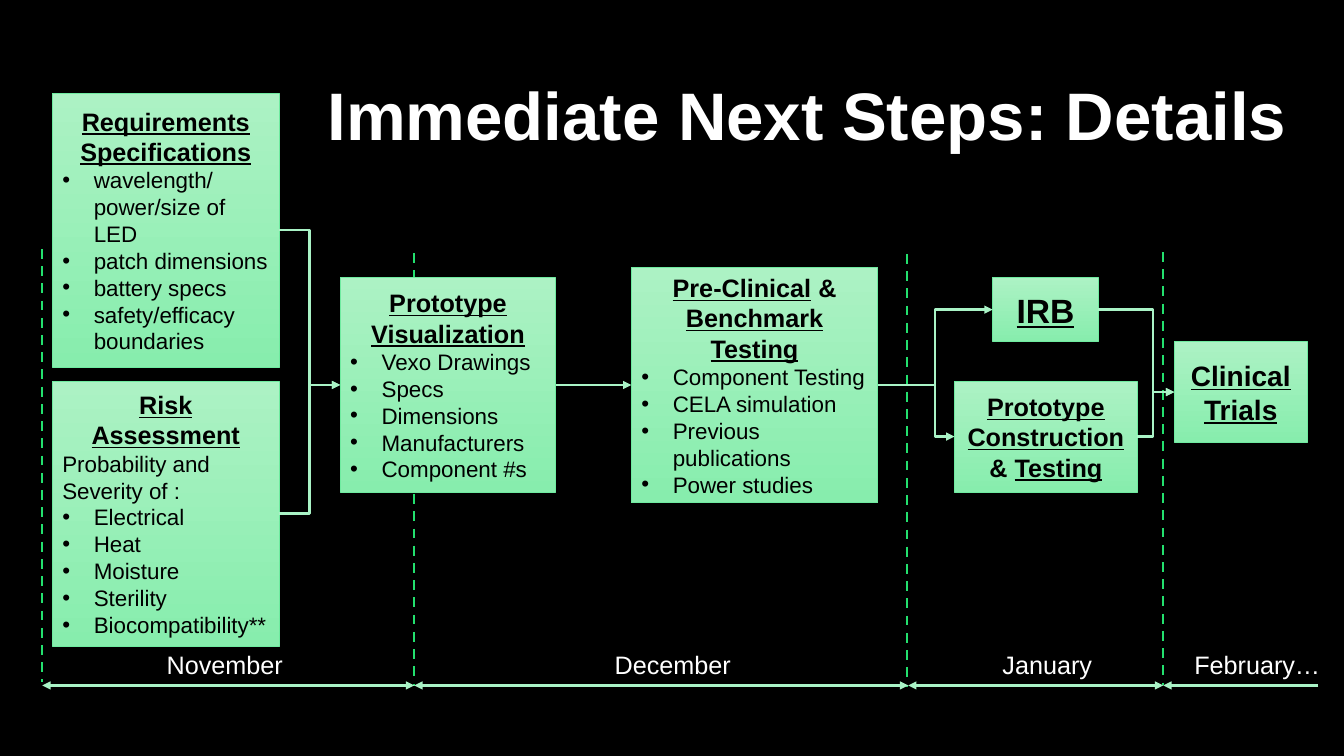
import pptx
import pptx.dml.color
import pptx.enum.dml
import pptx.enum.shapes
import pptx.enum.text
import pptx.oxml.ns
import pptx.util
from lxml import etree

COLORS = {
    "background": "000000",
    "title": "FFFFFF",
    "box_text": "000000",
    "box_top": "ACF2C4",
    "box_bottom": "87EDAD",
    "box_edge": "6FEBA0",
    "arrow": "A9F3C6",
    "divider": "23E06E",
}
FONT = "Arial"
LEFT, RIGHT = 1, 3
TIMELINE_Y = 489.6

Pt = pptx.util.Pt
qn = pptx.oxml.ns.qn
Align = pptx.enum.text.PP_ALIGN
Anchor = pptx.enum.text.MSO_ANCHOR
Connector = pptx.enum.shapes.MSO_CONNECTOR


def rgb(name):
    return pptx.dml.color.RGBColor.from_string(COLORS[name])


def add_span(para, text, *, size=16, color="box_text", bold=False, underline=False):
    span = para.add_run()
    span.text = text
    span.font.name = FONT
    span.font.size = Pt(size)
    span.font.bold = bold
    span.font.underline = underline
    span.font.color.rgb = rgb(color)


class SlideBuilder:
    """Holds the deck, the current page and the shared style."""

    def __init__(self, width, height):
        self.deck = pptx.Presentation()
        self.deck.slide_width = Pt(width)
        self.deck.slide_height = Pt(height)
        self.page = self.deck.slides.add_slide(self.deck.slide_layouts[6])
        self.page.background.fill.solid()
        self.page.background.fill.fore_color.rgb = rgb("background")

    def label(self, text, left, top, width, height, *, wrap=False,
              anchor=Anchor.TOP, **span_format):
        box = self.page.shapes.add_textbox(Pt(left), Pt(top), Pt(width), Pt(height))
        box.text_frame.word_wrap = wrap
        box.text_frame.vertical_anchor = anchor
        add_span(box.text_frame.paragraphs[0], text, **span_format)

    def box(self, left, top, width, height, heading, *, size=18, intro=None, bullets=()):
        """Heading spans alternate between underlined and plain."""
        box = self.page.shapes.add_shape(
            pptx.enum.shapes.MSO_SHAPE.RECTANGLE,
            Pt(left), Pt(top), Pt(width), Pt(height))
        box.shadow.inherit = False
        box.fill.gradient()
        box.fill.gradient_angle = 270
        for stop, color in zip(box.fill.gradient_stops, ("box_top", "box_bottom")):
            stop.color.rgb = rgb(color)
        box.line.color.rgb = rgb("box_edge")
        box.line.width = Pt(0.75)

        frame = box.text_frame
        frame.word_wrap = True
        frame.vertical_anchor = Anchor.MIDDLE
        para = frame.paragraphs[0]
        para.alignment = Align.CENTER
        for index, text in enumerate(heading):
            add_span(para, text, size=size, bold=True, underline=index % 2 == 0)
        if intro:
            para = frame.add_paragraph()
            para.alignment = Align.LEFT
            add_span(para, intro)
        for text in bullets:
            self.bullet(frame, text)
        return box

    def bullet(self, frame, text):
        para = frame.add_paragraph()
        para.alignment = Align.LEFT
        properties = para._p.get_or_add_pPr()
        properties.set("marL", str(Pt(22.5)))
        properties.set("indent", str(-Pt(22.5)))
        etree.SubElement(properties, qn("a:buFont"), typeface=FONT)
        etree.SubElement(properties, qn("a:buChar"), char="•")
        add_span(para, text)

    def line(self, start, end, *, kind=Connector.STRAIGHT, color="arrow",
             dashed=False, heads=()):
        line = self.page.shapes.add_connector(kind, *(Pt(n) for n in (*start, *end)))
        line.line.color.rgb = rgb(color)
        line.line.width = Pt(1.75)
        if dashed:
            line.line.dash_style = pptx.enum.dml.MSO_LINE.DASH
        outline = line.line._get_or_add_ln()
        for head in heads:
            etree.SubElement(outline, qn(f"a:{head}"), type="triangle")
        etree.SubElement(line._element.spPr, qn("a:effectLst"))
        return line

    def link(self, source, target, bend=None):
        """Join right side to left side, turning at x = bend if given."""
        kind = Connector.STRAIGHT if bend is None else Connector.ELBOW
        link = self.line((0, 0), (0, 0), kind=kind, heads=["tailEnd"])
        link.begin_connect(source, RIGHT)
        link.end_connect(target, LEFT)
        if bend is not None:
            share = (Pt(bend) - link.begin_x) / (link.end_x - link.begin_x)
            guides = link._element.spPr.find(qn("a:prstGeom")).find(qn("a:avLst"))
            etree.SubElement(guides, qn("a:gd"), name="adj1",
                             fmla=f"val {round(share * 100000)}")


def main():
    slide = SlideBuilder(960, 540)

    # Month dividers
    for x, top in ((30.2, 177.8), (295.9, 180.7), (648, 181.4), (830.9, 180)):
        slide.line((x, top), (x, top + 309.6), color="divider", dashed=True)

    # Title
    slide.label("Immediate Next Steps: Details", 226.8, 9.4, 722.9, 104.4, wrap=True,
                anchor=Anchor.BOTTOM, size=48, color="title", bold=True)

    # Steps
    requirements = slide.box(
        37.4, 66.5, 162, 195.8, ["Requirements Specifications"],
        bullets=["wavelength/ power/size of LED", "patch dimensions",
                 "battery specs", "safety/efficacy boundaries"])
    risk = slide.box(
        37.4, 272.2, 162, 189.4, ["Risk Assessment"],
        intro="Probability and Severity of :",
        bullets=["Electrical", "Heat", "Moisture", "Sterility", "Biocompatibility**"])
    visualization = slide.box(
        243, 198.5, 154, 153, ["Prototype Visualization"],
        bullets=["Vexo Drawings", "Specs", "Dimensions", "Manufacturers", "Component #s"])
    benchmark = slide.box(
        451, 191, 176, 168, ["Pre-Clinical", " &", " Benchmark Testing"],
        bullets=["Component Testing", "CELA simulation",
                 "Previous publications", "Power studies"])
    irb = slide.box(709, 198.5, 75.6, 45.4, ["IRB"], size=24)
    trials = slide.box(838.8, 244.1, 95, 72, ["Clinical Trials"], size=20)
    construction = slide.box(681.8, 272.2, 130.6, 79.4,
                             ["Prototype Construction ", "& ", "Testing"])

    # Flow between steps
    slide.link(requirements, visualization, bend=221.2)
    slide.link(risk, visualization, bend=221.2)
    slide.link(visualization, benchmark)
    slide.link(benchmark, construction, bend=668)
    slide.link(benchmark, irb, bend=668)
    slide.link(irb, trials, bend=823.6)
    slide.link(construction, trials, bend=823.6)

    # Timeline
    both = ["headEnd", "tailEnd"]
    for start, end, heads in ((30.2, 295.9, both), (295.9, 648.7, both),
                              (648.7, 830.9, both), (941.8, 830.9, ["tailEnd"])):
        slide.line((start, TIMELINE_Y), (end, TIMELINE_Y), heads=heads)
    for month, left, width in (("November", 112, 98.6), ("December", 432, 98.6),
                               ("January", 709, 79.2), ("February…", 846, 105)):
        slide.label(month, left, 460, width, 29, size=18, color="title")

    slide.deck.save("out.pptx")


if __name__ == "__main__":
    main()
